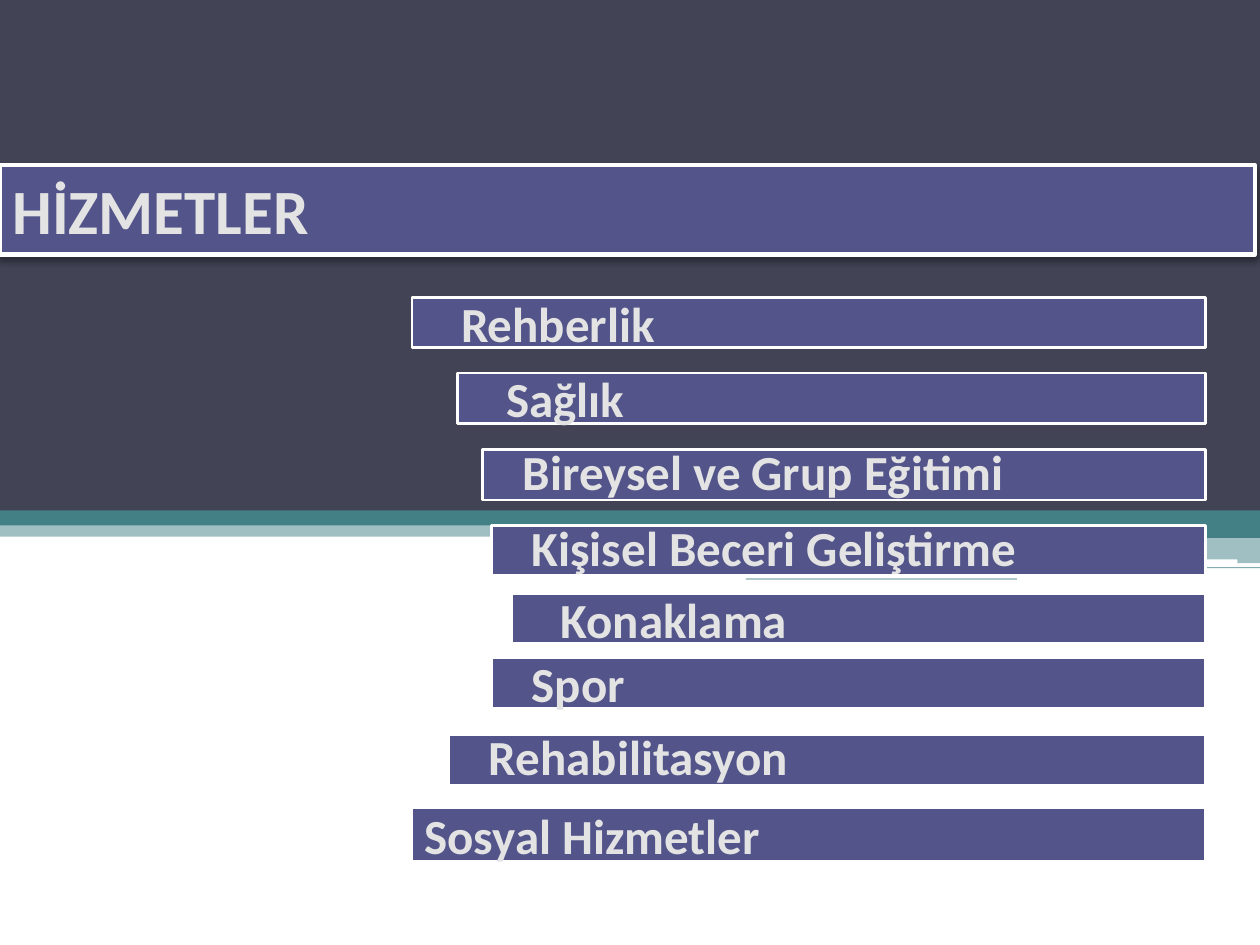
from lxml.etree import SubElement
from pptx import Presentation
from pptx.dml.color import RGBColor
from pptx.enum.shapes import MSO_SHAPE as Shape
from pptx.enum.text import MSO_ANCHOR as Anchor, PP_ALIGN as Align
from pptx.oxml.ns import qn
from pptx.util import Inches, Pt

TEAL = "438086"
NAVY = "424456"
PURPLE = "53548A"
WHITE = "FFFFFF"
TEXT = "E3E3E3"
BAR_RIGHT = 9.57

BANDS = [
    (5.92, 4.17, 4.08, 0.1, TEAL, 100),
    (5.92, 4.26, 4.08, 0.21, TEAL, 50),
    (5.92, 4.5, 4.08, 0.01, TEAL, 65),
    (5.92, 4.55, 2.15, 0.02, TEAL, 60),
    (5.92, 4.59, 2.15, 0.01, TEAL, 65),
    (8.07, 4.44, 1.75, 0.04, WHITE, 100),
    (0, 3.99, 10, 0.27, TEAL, 50),
    (0, 4.02, 10, 0.15, TEAL, 100),
    (7.01, 3.98, 2.99, 0.27, TEAL, 100),
    (0, 0, 10, 4.05, NAVY, 100),
]

SERVICES = [
    ("Rehberlik", 3.27, 2.36, 0.4, 0.39, 1),
    ("Sağlık", 3.63, 2.96, 0.4, 0.39, 1),
    ("Bireysel ve Grup Eğitimi", 3.83, 3.57, 0.4, 0.32, 0.9),
    ("Kişisel Beceri Geliştirme", 3.9, 4.17, 0.4, 0.32, 0.9),
    ("Konaklama", 4.06, 4.71, 0.4, 0.39, 1),
    ("Spor", 3.9, 5.22, 0.4, 0.32, 1),
    ("Rehabilitasyon", 3.56, 5.83, 0.4, 0.32, 0.9),
    ("Sosyal Hizmetler", 3.27, 6.41, 0.43, 0.1, 1),
]


def color(value):
    return RGBColor.from_string(value)


def add_box(slide, left, top, width, height, fill, kind=Shape.RECTANGLE):
    shape = slide.shapes.add_shape(
        kind, Inches(left), Inches(top), Inches(width), Inches(height)
    )
    shape.shadow.inherit = False
    shape.fill.solid()
    shape.fill.fore_color.rgb = color(fill)
    shape.line.fill.background()
    return shape


def add_band(slide, left, top, width, height, fill, opacity):
    kind = Shape.ROUNDED_RECTANGLE if fill == WHITE else Shape.RECTANGLE
    shape = add_box(slide, left, top, width, height, fill, kind)
    if opacity < 100:
        fill_color = shape._element.spPr.find(f"{qn('a:solidFill')}/{qn('a:srgbClr')}")
        SubElement(fill_color, qn("a:alpha"), val=str(opacity * 1000))


def add_bar(slide, text, left, top, width, height, size, line_width, inset=0.1,
            spacing=1, anchor=Anchor.MIDDLE):
    shape = add_box(slide, left, top, width, height, PURPLE)
    shape.line.color.rgb = color(WHITE)
    shape.line.width = Pt(line_width)
    frame = shape.text_frame
    frame.word_wrap = True
    frame.vertical_anchor = anchor
    frame.margin_left = Inches(inset)
    paragraph = frame.paragraphs[0]
    paragraph.alignment = Align.LEFT
    if spacing != 1:
        paragraph.line_spacing = spacing
    run = paragraph.add_run()
    run.text = text
    run.font.name = "Calibri"
    run.font.size = Pt(size)
    run.font.bold = True
    run.font.color.rgb = color(TEXT)
    return shape


def add_shadow(shape, blur, distance, opacity):
    effects = shape._element.spPr.find(qn("a:effectLst"))
    shadow = SubElement(
        effects, qn("a:outerShdw"), blurRad=str(Pt(blur)), dist=str(Pt(distance)),
        dir=str(90 * 60000), algn="ctr", rotWithShape="0",
    )
    shadow_color = SubElement(shadow, qn("a:srgbClr"), val="000000")
    SubElement(shadow_color, qn("a:alpha"), val=str(opacity * 1000))


def main():
    presentation = Presentation()
    presentation.slide_width = Inches(10)
    presentation.slide_height = Inches(7.5)
    slide = presentation.slides.add_slide(presentation.slide_layouts[6])

    for band in BANDS:
        add_band(slide, *band)

    title = add_bar(slide, "HİZMETLER", 0, 1.31, 9.96, 0.71, 36, 2.5,
                    anchor=Anchor.TOP)
    add_shadow(title, 4.1, 2, 40)

    for text, left, top, height, inset, spacing in SERVICES:
        add_bar(slide, text, left, top, BAR_RIGHT - left, height, 28, 1.5,
                inset, spacing)

    presentation.save("out.pptx")


if __name__ == "__main__":
    main()
